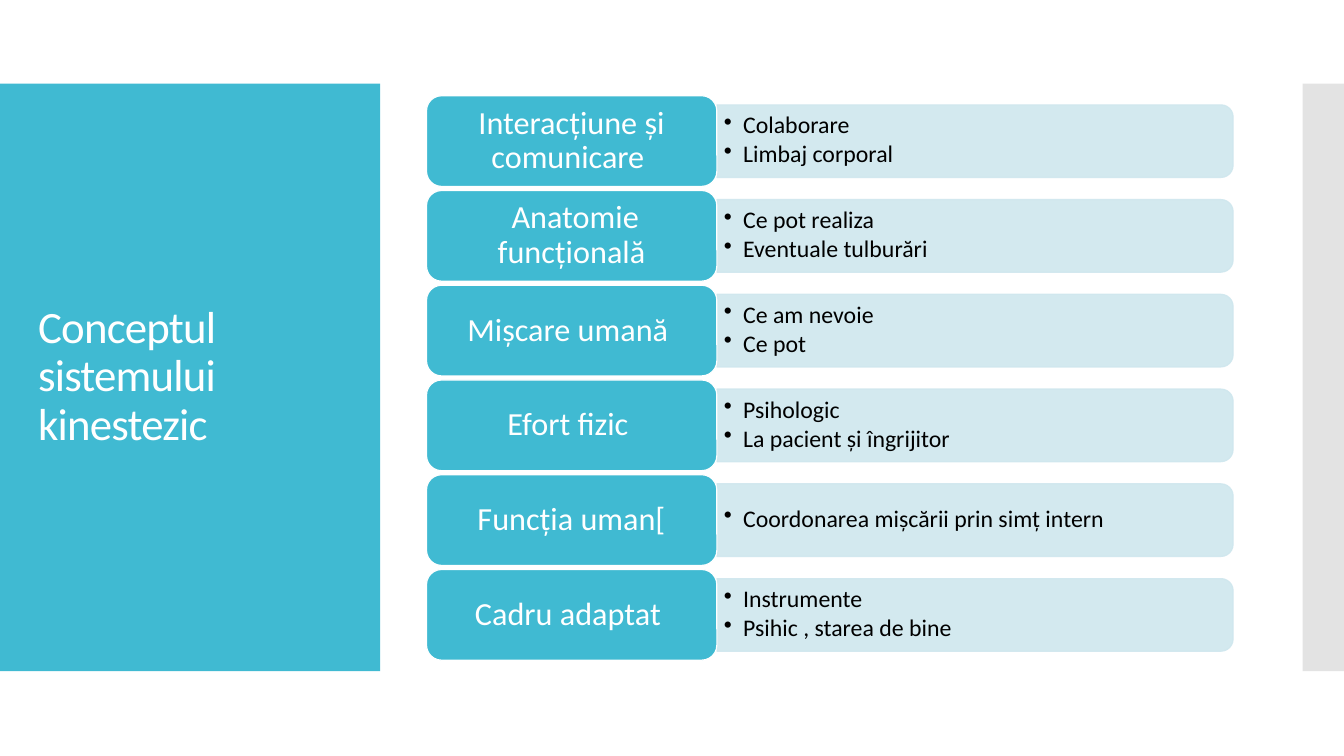
from dataclasses import dataclass

from lxml.etree import SubElement
from pptx import Presentation
from pptx.dml.color import RGBColor
from pptx.enum.shapes import MSO_SHAPE as Shape
from pptx.enum.text import MSO_ANCHOR as Anchor, PP_ALIGN as Align
from pptx.oxml.ns import qn
from pptx.util import Inches, Pt

COLORS = {"teal": "40BAD2", "pale": "CFE7EE", "grey": "C8C8C8",
          "white": "FFFFFF", "black": "000000"}
FONT = "Calibri"

# Row geometry, in inches
FIRST_MID, STEP = 1.4, 0.94
LABEL_LEFT, LABEL_W, LABEL_H = 4.23, 2.88, 0.9
PANEL_W, PANEL_H = 5.12, 0.72
PANEL_LEFT = LABEL_LEFT + LABEL_W


@dataclass
class Row:
    label: str
    points: list[str]


ROWS = [
    Row("Interacțiune și comunicare ", ["Colaborare", "Limbaj corporal"]),
    Row(" Anatomie funcțională", ["Ce pot realiza", "Eventuale tulburări"]),
    Row("Mișcare umană ", ["Ce am nevoie", "Ce pot"]),
    Row("Efort fizic ", ["Psihologic", "La pacient și îngrijitor"]),
    Row("Funcția uman[", ["Coordonarea mișcării prin simț intern"]),
    Row("Cadru adaptat ", ["Instrumente", "Psihic , starea de bine"]),
]


def rgb(name: str) -> RGBColor:
    return RGBColor.from_string(COLORS[name])


def set_alpha(fill, percent: int) -> None:
    """Make a solid fill partly transparent."""
    clr = fill._xPr.find(qn("a:solidFill"))[0]
    SubElement(clr, qn("a:alpha")).set("val", str(percent * 1000))


def add_box(slide, kind, left: float, top: float, width: float, height: float,
            color: str, line: str | None = None, alpha: int = 100):
    s = slide.shapes.add_shape(kind, Inches(left), Inches(top), Inches(width), Inches(height))
    s.shadow.inherit = False
    s.fill.solid()
    s.fill.fore_color.rgb = rgb(color)
    if line:
        s.line.color.rgb = rgb(line)
        s.line.width = Pt(0.85)
    else:
        s.line.fill.background()
    if alpha < 100:
        set_alpha(s.fill, alpha)
        if line:
            set_alpha(s.line.fill, alpha)
    return s


def add_text(slide, left: float, top: float, width: float, height: float):
    return slide.shapes.add_textbox(Inches(left), Inches(top), Inches(width),
                                    Inches(height)).text_frame


def write(tf, lines: list[str], size: int, color: str, align=Align.LEFT,
          margins: tuple[float, float] = (0.1, 0.05)) -> None:
    tf.word_wrap = True
    tf.vertical_anchor = Anchor.MIDDLE
    tf.margin_left = tf.margin_right = Inches(margins[0])
    tf.margin_top = tf.margin_bottom = Inches(margins[1])
    tf.text = "\n".join(lines)
    for p in tf.paragraphs:
        p.alignment = align
        p.line_spacing = 0.9
        p.font.size = Pt(size)
        p.font.name = FONT
        p.font.color.rgb = rgb(color)


def add_bullets(tf) -> None:
    for p in tf.paragraphs:
        p.space_after = Pt(2.5)
        pPr = p._p.get_or_add_pPr()
        pPr.set("marL", str(Inches(0.19)))
        pPr.set("indent", str(-Inches(0.19)))
        bullet = pPr.makeelement(qn("a:buChar"), {"char": "•"})
        pPr.find(qn("a:defRPr")).addprevious(bullet)


def add_row(slide, row: Row, mid: float) -> None:
    # Panel, turned so that its rounded end faces right
    s = add_box(slide, Shape.ROUND_2_SAME_RECTANGLE,
                PANEL_LEFT + (PANEL_W - PANEL_H) / 2, mid - PANEL_W / 2,
                PANEL_H, PANEL_W, "pale", "pale", 90)
    s.rotation = 90
    tf = add_text(slide, PANEL_LEFT, mid - 0.33, 5.09, 0.65)
    write(tf, row.points, 17, "black", margins=(0.07, 0.04))
    add_bullets(tf)
    # Label
    s = add_box(slide, Shape.ROUNDED_RECTANGLE, LABEL_LEFT, mid - LABEL_H / 2,
                LABEL_W, LABEL_H, "teal", "white")
    write(s.text_frame, [row.label], 23, "white", Align.CENTER, (0.14, 0.05))


def main() -> None:
    prs = Presentation()
    prs.slide_width, prs.slide_height = Inches(13.33), Inches(7.5)
    slide = prs.slides.add_slide(prs.slide_layouts[6])

    # Side bands
    add_box(slide, Shape.RECTANGLE, 0, 0.83, 3.77, 5.83, "teal")
    add_box(slide, Shape.RECTANGLE, 12.92, 0.83, 0.41, 5.83, "grey", alpha=50)

    # Title
    tf = add_text(slide, 0.28, 1.23, 3.22, 5.03)
    write(tf, ["Conceptul sistemului kinestezic"], 32, "white")
    tf.paragraphs[0].runs[0].font._element.set("spc", "-60")

    # Concept rows
    for i, row in enumerate(ROWS):
        add_row(slide, row, FIRST_MID + i * STEP)

    prs.save("out.pptx")


if __name__ == "__main__":
    main()
